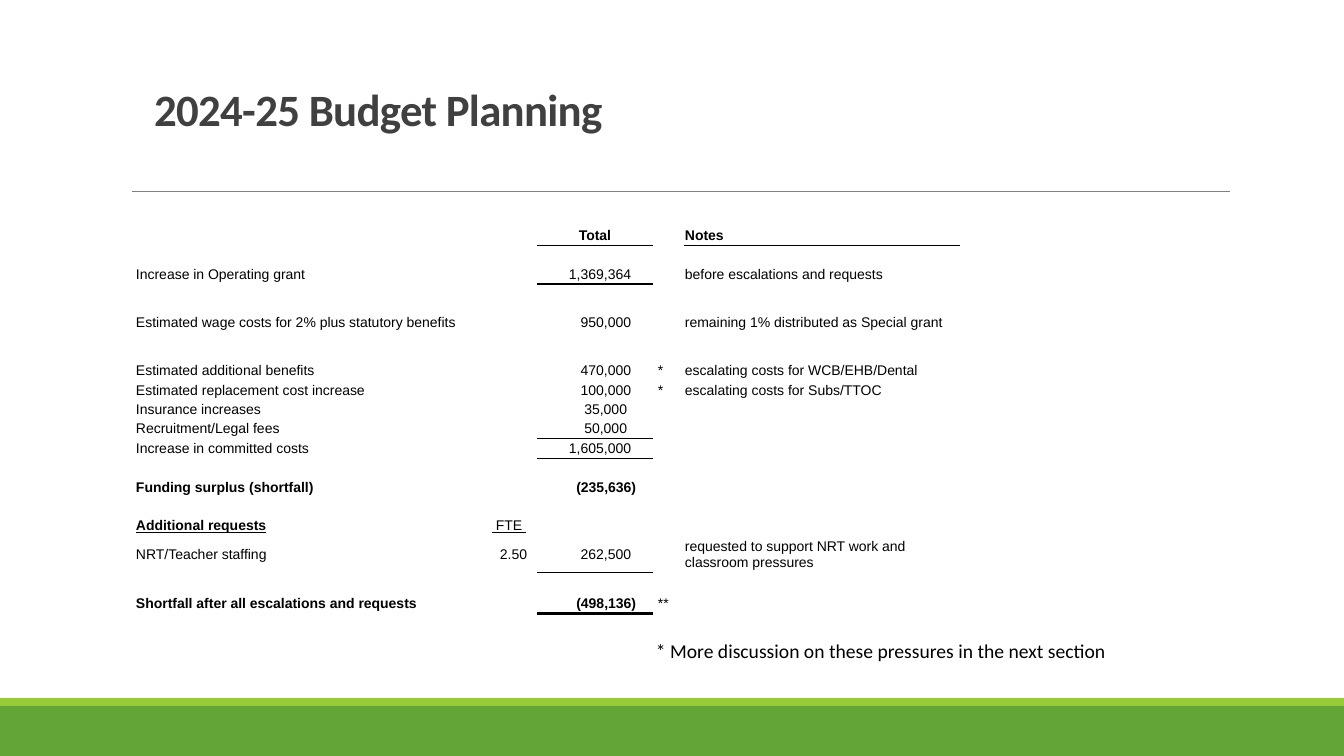
"""Build the 2024-25 budget planning slide."""
from dataclasses import dataclass

import lxml.etree
import pptx
import pptx.dml.color
import pptx.enum.shapes
import pptx.enum.text
import pptx.oxml.ns
import pptx.util

PX = 914400 / 100.8
COLOURS = {"green": "63A537", "lime": "99CB38", "rule": "808080", "title": "404040", "ink": "000000"}
ALIGN = pptx.enum.text.PP_ALIGN
ANCHOR = pptx.enum.text.MSO_ANCHOR
PLAIN_TABLE = "{2D5ABB26-0587-4C30-8999-92F81FD0307C}"
COLUMN_WIDTHS = [356, 46, 116, 31, 276]
LABEL, FTE, TOTAL, MARK, NOTES = range(len(COLUMN_WIDTHS))
THIN, THICK = 0.5, 2


@dataclass(frozen=True)
class Band:
    top: int
    height: int
    colour: str


@dataclass(frozen=True)
class BudgetRow:
    height: int
    label: str = ""
    fte: str = ""
    total: str = ""
    mark: str = ""
    notes: str = ""
    bold: bool = False
    heading: bool = False
    rule: float = 0
    total_inset: int = 22


BANDS = [Band(706, 50, "green"), Band(698, 8, "lime")]
ROWS = [
    BudgetRow(19, total="Total", notes="Notes", bold=True, heading=True, rule=THIN),
    BudgetRow(19),
    BudgetRow(20, "Increase in Operating grant", total="1,369,364",
              notes="before escalations and requests", rule=THICK),
    BudgetRow(20),
    BudgetRow(37, "Estimated wage costs for 2% plus statutory benefits", total="950,000",
              notes="remaining 1% distributed as Special grant"),
    BudgetRow(19),
    BudgetRow(20, "Estimated additional benefits", total="470,000", mark="*",
              notes="escalating costs for WCB/EHB/Dental"),
    BudgetRow(20, "Estimated replacement cost increase", total="100,000", mark="*",
              notes="escalating costs for Subs/TTOC"),
    BudgetRow(19, "Insurance increases", total="35,000", total_inset=26),
    BudgetRow(20, "Recruitment/Legal fees", total="50,000", rule=THIN, total_inset=26),
    BudgetRow(20, "Increase in committed costs", total="1,605,000", rule=THIN),
    BudgetRow(19),
    BudgetRow(19, "Funding surplus (shortfall)", total="(235,636)", bold=True, total_inset=17),
    BudgetRow(19),
    BudgetRow(20, "Additional requests", fte=" FTE ", bold=True, heading=True),
    BudgetRow(37, "NRT/Teacher staffing", fte="2.50", total="262,500",
              notes="requested to support NRT work and classroom pressures", rule=THIN),
    BudgetRow(20),
    BudgetRow(21, "Shortfall after all escalations and requests", total="(498,136)", mark="**",
              bold=True, rule=THICK, total_inset=17),
]


def px(length: int) -> int:
    """Turn a length in px into EMU."""
    return round(length * PX)


def rgb(name: str) -> pptx.dml.color.RGBColor:
    """Look up a named colour."""
    return pptx.dml.color.RGBColor.from_string(COLOURS[name])


def add_span(para, text: str, font: str, size: int, colour: str, bold: bool = False):
    """Add one formatted run to a paragraph."""
    span = para.add_run()
    span.text = text
    span.font.name = font
    span.font.size = pptx.util.Pt(size)
    span.font.bold = bold
    span.font.color.rgb = rgb(colour)
    return span


def add_child(parent, tag: str, **attributes: str):
    """Append a DrawingML element."""
    return lxml.etree.SubElement(parent, pptx.oxml.ns.qn(tag), attributes)


def add_border(cell, tag: str, points: float) -> None:
    """Draw one solid border at the edge of a cell."""
    properties = cell._tc.get_or_add_tcPr()
    border = lxml.etree.Element(pptx.oxml.ns.qn(tag), w=str(pptx.util.Pt(points)))
    add_child(add_child(border, "a:solidFill"), "a:srgbClr", val=COLOURS["ink"])
    properties.insert(0, border)


def draw_band(page, band: Band) -> None:
    """Draw a full-width band at the foot of the slide."""
    box = page.shapes.add_shape(pptx.enum.shapes.MSO_SHAPE.RECTANGLE,
                                0, px(band.top), px(1344), px(band.height))
    box.shadow.inherit = False
    box.fill.solid()
    box.fill.fore_color.rgb = rgb(band.colour)
    box.line.fill.background()


def draw_rule(page) -> None:
    """Draw the line beneath the title."""
    rule = page.shapes.add_connector(pptx.enum.shapes.MSO_CONNECTOR.STRAIGHT,
                                     px(132), px(191), px(1230), px(191))
    rule.line.color.rgb = rgb("rule")
    rule.line.width = pptx.util.Pt(0.5)
    add_child(rule._element.spPr, "a:effectLst")


def draw_title(page) -> None:
    """Place and format the title."""
    box = page.shapes.title
    box.left, box.top, box.width, box.height = px(144), px(58), px(769), px(83)
    box.text_frame.vertical_anchor = ANCHOR.BOTTOM
    para = box.text_frame.paragraphs[0]
    para.alignment = ALIGN.LEFT
    para.line_spacing = 0.85
    span = add_span(para, "2024-25 Budget Planning", "Calibri", 32, "title", True)
    span.font._element.set("spc", "-50")


def draw_footnote(page) -> None:
    """Write the remark below the table."""
    box = page.shapes.add_textbox(px(646), px(634), px(489), px(34))
    box.text_frame.word_wrap = True
    add_span(box.text_frame.paragraphs[0],
             "* More discussion on these pressures in the next section", "Calibri", 14, "ink")


def fill_cell(cell, row: BudgetRow, column: int, text: str) -> None:
    """Set the inset, alignment and text of one cell."""
    cell.fill.background()
    cell.margin_left = px(5 if column == MARK else 1)
    cell.margin_right = cell.margin_top = px(1)
    cell.margin_bottom = 0
    cell.vertical_anchor = ANCHOR.MIDDLE
    para = cell.text_frame.paragraphs[0]
    if not text:
        add_child(para._p, "a:endParaRPr", sz="1000")
        return
    span = add_span(para, text, "Arial", 10, "ink", row.bold and column not in (FTE, MARK))
    span.font.underline = row.heading and column in (LABEL, FTE)
    if row.heading and column == TOTAL:
        para.alignment = ALIGN.CENTER
    elif column == TOTAL or (column == FTE and not row.heading):
        para.alignment = ALIGN.RIGHT
        cell.margin_right = px(row.total_inset if column == TOTAL else 10)


def draw_table(page) -> None:
    """Draw the budget table with its ruled totals."""
    frame = page.shapes.add_table(len(ROWS), len(COLUMN_WIDTHS), px(135), px(226),
                                  px(sum(COLUMN_WIDTHS)), px(sum(row.height for row in ROWS)))
    table = frame.table
    table.first_row = table.horz_banding = False
    table._tbl.tblPr.find(pptx.oxml.ns.qn("a:tableStyleId")).text = PLAIN_TABLE
    for column, width in zip(table.columns, COLUMN_WIDTHS):
        column.width = px(width)
    for index, row in enumerate(ROWS):
        table.rows[index].height = px(row.height)
        texts = [row.label, row.fte, row.total, row.mark, row.notes]
        for column, text in enumerate(texts):
            cell = table.cell(index, column)
            fill_cell(cell, row, column, text)
            if row.rule and (column == TOTAL or (column == NOTES and row.heading)):
                add_border(cell, "a:lnB", row.rule)


def main() -> None:
    """Build and save the deck."""
    deck = pptx.Presentation()
    deck.slide_width, deck.slide_height = px(1344), px(756)
    page = deck.slides.add_slide(deck.slide_layouts[5])
    for band in BANDS:
        draw_band(page, band)
    draw_rule(page)
    draw_title(page)
    draw_footnote(page)
    draw_table(page)
    deck.save("out.pptx")


if __name__ == "__main__":
    main()
